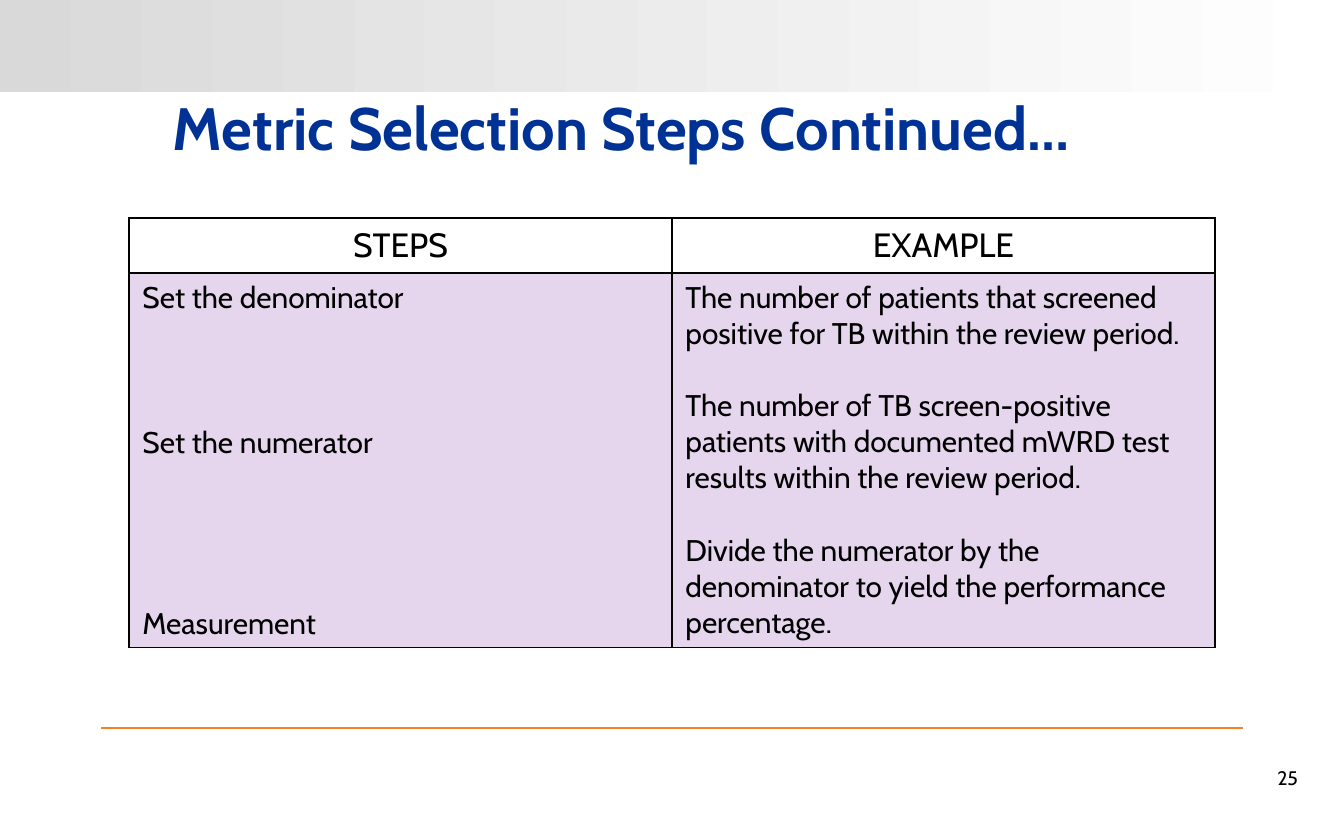
"""Build the metric selection steps slide with its two-column table."""
from lxml import etree
from pptx import Presentation
from pptx.dml.color import RGBColor
from pptx.enum.shapes import MSO_CONNECTOR, MSO_SHAPE
from pptx.enum.text import MSO_ANCHOR, PP_ALIGN
from pptx.oxml.ns import qn
from pptx.util import Pt

LEFT, CENTER, RIGHT = PP_ALIGN.LEFT, PP_ALIGN.CENTER, PP_ALIGN.RIGHT
TOP, MIDDLE = MSO_ANCHOR.TOP, MSO_ANCHOR.MIDDLE
RECTANGLE, STRAIGHT = MSO_SHAPE.RECTANGLE, MSO_CONNECTOR.STRAIGHT

TITLE = "Metric Selection Steps Continued…"
PAGE = "25"
HEADERS = ["STEPS", "EXAMPLE"]
STEPS = ["Set the denominator", "Set the numerator", "Measurement"]
EXAMPLES = [
    "The number of patients that screened positive for TB within the review period.",
    "The number of TB screen-positive patients with documented mWRD test results "
    "within the review period.",
    "Divide the numerator by the denominator to yield the performance percentage.",
]
STEP_GAPS = [0, 3, 4]
EXAMPLE_GAPS = [0, 1, 1]

FONT = "Cabin"
LINE_PT = 19.4
COLORS = {"title": "003296", "text": "000000", "rule": "F58025", "body": "E5D6EE",
          "band_start": "D9D9D9", "band_end": "FFFFFF"}
COLUMN_WIDTH = 543
ROW_HEIGHTS = [55, 374]


def px(length):
    return round(length * 914400 / 134.4)


def rgb(name):
    return RGBColor.from_string(COLORS[name])


def style(paragraph, size, color="text", align=LEFT, bold=False):
    paragraph.alignment = align
    font = paragraph.font
    font.name, font.size, font.bold = FONT, Pt(size), bold
    font.color.rgb = rgb(color)


def add_text(slide, box, text, anchor, spacing, **look):
    frame = slide.shapes.add_textbox(*map(px, box)).text_frame
    frame.word_wrap = True
    frame.vertical_anchor = anchor
    frame.margin_left = frame.margin_right = 0
    paragraph = frame.paragraphs[0]
    paragraph.text = text
    paragraph.line_spacing = spacing
    style(paragraph, **look)


def add_band(slide):
    band = slide.shapes.add_shape(RECTANGLE, 0, 0, px(1344), px(92))
    band.shadow.inherit = False
    band.line.fill.background()
    band.fill.gradient()
    band.fill.gradient_angle = 0
    for stop, name in zip(band.fill.gradient_stops, ["band_start", "band_end"]):
        stop.color.rgb = rgb(name)


def add_rule(slide):
    rule = slide.shapes.add_connector(STRAIGHT, px(101), px(728), px(1243), px(728))
    rule.line.color.rgb = rgb("rule")
    rule.line.width = Pt(1)
    etree.SubElement(rule._element.spPr, qn("a:effectLst"))


def add_borders(cell):
    properties = cell._tc.get_or_add_tcPr()
    for side in ["L", "R", "T", "B"]:
        border = etree.SubElement(properties, qn(f"a:ln{side}"), w=str(Pt(1)))
        fill = etree.SubElement(border, qn("a:solidFill"))
        etree.SubElement(fill, qn("a:srgbClr"), val=COLORS["text"])


def fill_cell(cell, texts, gaps, size, align):
    cell.text = "\n".join(texts)
    for paragraph, gap in zip(cell.text_frame.paragraphs, gaps):
        if gap:
            paragraph.space_before = Pt(gap * LINE_PT)
        style(paragraph, size, align=align)
    add_borders(cell)


def add_steps_table(slide):
    table = slide.shapes.add_table(2, 2, px(129), px(218), px(2 * COLUMN_WIDTH),
                                   px(sum(ROW_HEIGHTS))).table
    for row, height in zip(table.rows, ROW_HEIGHTS):
        row.height = px(height)
    columns = zip(HEADERS, [STEPS, EXAMPLES], [STEP_GAPS, EXAMPLE_GAPS])
    for index, (header, texts, gaps) in enumerate(columns):
        table.columns[index].width = px(COLUMN_WIDTH)
        head, body = table.cell(0, index), table.cell(1, index)
        fill_cell(head, [header], [0], 18, CENTER)
        head.fill.background()
        fill_cell(body, texts, gaps, 16, LEFT)
        body.fill.solid()
        body.fill.fore_color.rgb = rgb("body")


def main():
    deck = Presentation()
    deck.slide_width, deck.slide_height = px(1344), px(840)
    slide = deck.slides.add_slide(deck.slide_layouts[6])
    add_band(slide)
    add_rule(slide)
    add_text(slide, (996, 757, 302, 44), PAGE, MIDDLE, 0.9, size=10.5, align=RIGHT)
    add_text(slide, (173, 95, 997, 69), TITLE, TOP, 0.85, size=32, color="title", bold=True)
    add_steps_table(slide)
    deck.save("out.pptx")


if __name__ == "__main__":
    main()
